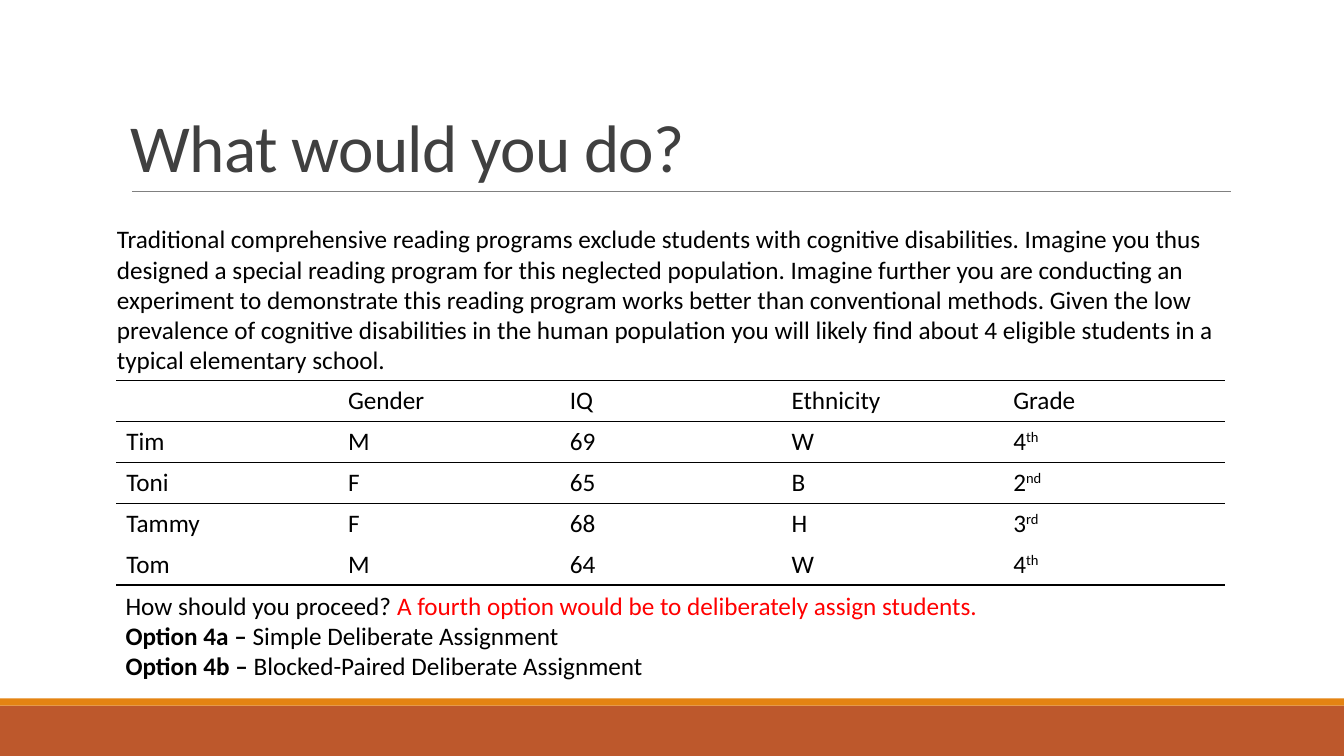
"""Builds the reading-program slide with its student table and assignment options."""
from lxml import etree
from pptx import Presentation
from pptx import util as u
from pptx.dml.color import RGBColor
from pptx.enum import shapes, text
from pptx.oxml.ns import qn

COLORS = {"rust": "BD582C", "orange": "E48312", "rule": "808080",
          "title": "404040", "body": "000000", "alert": "FF0000"}
NO_STYLE = "{2D5ABB26-0587-4C30-8999-92F81FD0307C}"


def write(paragraph, words, size=18, color="body", bold=False, **attributes):
    run = paragraph.add_run()
    run.text = words
    run.font.name = "Calibri"
    run.font.size = u.Pt(size)
    run.font.bold = bold
    run.font.color.rgb = RGBColor.from_string(COLORS[color])
    for key, value in attributes.items():
        run._r.get_or_add_rPr().set(key, str(value))


def add_text(left, top, width, height, anchor=text.MSO_ANCHOR.TOP):
    frame = slide.shapes.add_textbox(u.Pt(left), u.Pt(top), u.Pt(width), u.Pt(height)).text_frame
    frame.word_wrap = True
    frame.vertical_anchor = anchor
    return frame


deck = Presentation()
deck.slide_width, deck.slide_height = u.Pt(960), u.Pt(540)
slide = deck.slides.add_slide(deck.slide_layouts[6])

for top, height, color in [(504, 36, "rust"), (498.8, 5.2, "orange")]:
    band = slide.shapes.add_shape(shapes.MSO_SHAPE.RECTANGLE, 0, u.Pt(top), u.Pt(960), u.Pt(height))
    band.shadow.inherit = False
    band.fill.solid()
    band.fill.fore_color.rgb = RGBColor.from_string(COLORS[color])
    band.line.fill.background()

title_rule = slide.shapes.add_connector(
    shapes.MSO_CONNECTOR.STRAIGHT, u.Pt(94.3), u.Pt(136.6), u.Pt(879), u.Pt(136.6))
title_rule.line.color.rgb = RGBColor.from_string(COLORS["rule"])
title_rule.line.width = u.Pt(0.5)
etree.SubElement(title_rule._element.spPr, qn("a:effectLst"))

title = add_text(86.4, 22.3, 792, 114.5, text.MSO_ANCHOR.BOTTOM).paragraphs[0]
title.line_spacing = 0.85
write(title, "What would you do?", size=48, color="title", spc=-50)

students = [
    ["", "Gender", "IQ", "Ethnicity", "Grade"],
    ["Tim", "M", "69", "W", ("4", "th")],
    ["Toni", "F", "65", "B", ("2", "nd")],
    ["Tammy", "F", "68", "H", ("3", "rd")],
    ["Tom", "M", "64", "W", ("4", "th")],
]
ruled_sides = {0: ["lnT", "lnB"], 1: ["lnT", "lnB"], 2: ["lnT"], 4: ["lnB"]}
roster = slide.shapes.add_table(5, 5, u.Pt(83), u.Pt(271.8), u.Pt(792), u.Pt(146)).table
roster.first_row = roster.horz_banding = False
roster._tbl.tblPr.find(qn("a:tableStyleId")).text = NO_STYLE
for row, student in enumerate(students):
    roster.rows[row].height = u.Pt(29.2)
    for column, entry in enumerate(student):
        cell = roster.cell(row, column)
        borders = cell._tc.get_or_add_tcPr()
        for side in ruled_sides.get(row, []):
            border = etree.SubElement(borders, qn(f"a:{side}"), w=str(u.Pt(1)))
            ink = etree.SubElement(border, qn("a:solidFill"))
            etree.SubElement(ink, qn("a:srgbClr"), val=COLORS["body"])
        cell.fill.background()
        line = cell.text_frame.paragraphs[0]
        if isinstance(entry, tuple):
            write(line, entry[0])
            write(line, entry[1], baseline=30000)
        elif entry:
            write(line, entry)

scenario = add_text(76.4, 156.2, 802, 116.6)
write(scenario.paragraphs[0],
      "Traditional comprehensive reading programs exclude students with cognitive disabilities. "
      "Imagine you thus designed a special reading program for this neglected population. "
      "Imagine further you are conducting an experiment to demonstrate this reading program works "
      "better than conventional methods. Given the low prevalence of cognitive disabilities in the "
      "human population you will likely find about 4 eligible students in a typical elementary school.")

options = add_text(82.6, 417.9, 630.7, 94.3)
question = options.paragraphs[0]
write(question, "How should you proceed? ")
write(question, "A fourth option would be to deliberately assign students.", color="alert")
for label, method in [("4a", "Simple"), ("4b", "Blocked-Paired")]:
    option = options.add_paragraph()
    write(option, f"Option {label} – ", bold=True)
    write(option, f"{method} Deliberate Assignment")

deck.save("out.pptx")
